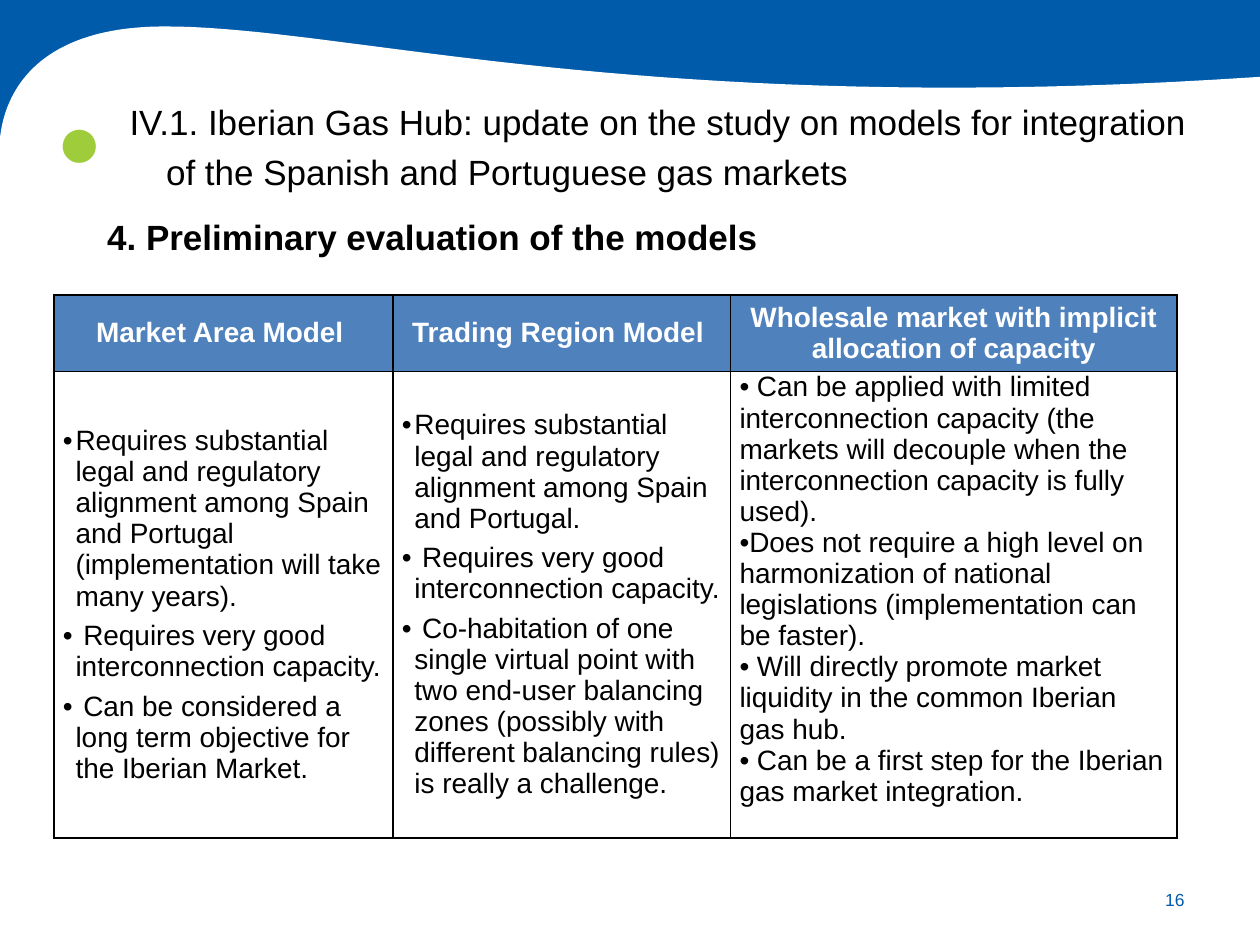
from lxml.etree import SubElement
from pptx import Presentation
from pptx.dml.color import RGBColor
from pptx.enum.shapes import MSO_SHAPE as Shape
from pptx.enum.text import MSO_ANCHOR as Anchor, MSO_AUTO_SIZE as AutoSize, PP_ALIGN as Align
from pptx.oxml.ns import qn
from pptx.util import Inches, Pt

BLUE = RGBColor(0x00, 0x5B, 0xAB)
GREEN = RGBColor(0x9E, 0xCC, 0x3B)
HEADER_BLUE = RGBColor(0x4F, 0x81, 0xBD)
BLACK = RGBColor(0, 0, 0)
WHITE = RGBColor(255, 255, 255)

# Each curve: start, two control points, end
WAVE = [
    [(10, 0.61), (5.1, 0.94), (2.76, 0.21), (1.31, 0.21)],
    [(1.31, 0.21), (0.23, 0.21), (0.03, 0.8), (0, 1.1)],
]
CURVE_STEPS = 40

MODELS = [
    ("Market Area Model ", [
        "Requires substantial legal and regulatory alignment among Spain and Portugal "
        "(implementation will take many years).",
        " Requires very good interconnection capacity.",
        " Can be considered a long term objective for the Iberian Market.",
    ]),
    ("Trading Region Model ", [
        "Requires substantial legal and regulatory alignment among Spain and Portugal.",
        " Requires very good interconnection capacity.",
        " Co-habitation of one single virtual point with two end-user balancing zones "
        "(possibly with different balancing rules) is really a challenge.",
    ]),
    ("Wholesale market with implicit allocation of capacity", [
        " Can be applied with limited interconnection capacity (the markets will "
        "decouple when the interconnection capacity is fully used).",
        "Does not require a high level on harmonization of national legislations "
        "(implementation can be faster).",
        " Will directly promote market liquidity in the common Iberian gas hub.",
        " Can be a first step for the Iberian gas market integration.",
    ]),
]
COLUMN_WIDTHS = [2.69, 2.68, 3.54]
ROW_HEIGHTS = [0.61, 3.7]


def add_run(paragraph, text, size, color, bold=False):
    run = paragraph.add_run()
    run.text = text
    font = run.font
    font.name, font.size, font.bold = "Arial", Pt(size), bold
    font.color.rgb = color


def indent(paragraph, margin, first_line):
    properties = paragraph._p.get_or_add_pPr()
    properties.set("marL", str(Inches(margin)))
    properties.set("indent", str(Inches(first_line)))


def bezier_point(curve, t):
    weights = ((1 - t) ** 3, 3 * t * (1 - t) ** 2, 3 * t * t * (1 - t), t ** 3)
    return tuple(Inches(sum(w * point[axis] for w, point in zip(weights, curve)))
                 for axis in (0, 1))


def paint(shape, color):
    shape.shadow.inherit = False
    shape.fill.solid()
    shape.fill.fore_color.rgb = color
    shape.line.fill.background()


def add_wave_banner(slide, left, top, width, height):
    """Blue band whose lower edge is cut by the white page wave."""
    band = slide.shapes.add_shape(Shape.RECTANGLE, left, top, width, height)
    paint(band, BLUE)
    edge = [bezier_point(curve, step / CURVE_STEPS)
            for curve in WAVE for step in range(CURVE_STEPS + 1)]
    bottom = Inches(7.5)
    page = slide.shapes.build_freeform(*edge[0])
    page.add_line_segments(edge[1:] + [(left, bottom), (left + width, bottom)], close=True)
    paint(page.convert_to_shape(), WHITE)


def add_label(slide, box, text, size, color, align=Align.LEFT, anchor=Anchor.TOP):
    frame = slide.shapes.add_textbox(*box).text_frame
    frame.word_wrap = True
    frame.vertical_anchor = anchor
    paragraph = frame.paragraphs[0]
    paragraph.alignment = align
    add_run(paragraph, text, size, color)
    return paragraph


def add_heading(slide, left, top, width, height):
    """Section heading with its green marker in front."""
    marker_box = (left, top - Inches(0.11), Inches(0.55), Inches(0.94))
    marker = add_label(slide, marker_box, "●", 44, GREEN, Align.CENTER, Anchor.BOTTOM)
    indent(marker, 0.39, -0.39)
    text_left = left + Inches(0.48)
    heading = add_label(
        slide, (text_left, top, left + width - text_left, height),
        "IV.1. Iberian Gas Hub: update on the study on models for integration "
        "of the Spanish and Portuguese gas markets", 20, BLACK)
    indent(heading, 0.39, -0.29)
    heading.line_spacing = 1.2


def fill_title(slide, left, top, width, height):
    title = slide.shapes.title
    slide.shapes._spTree.append(title._element)  # in front of the wave
    title.left, title.top, title.width, title.height = left, top, width, height
    frame = title.text_frame
    frame.auto_size = AutoSize.NONE
    frame.vertical_anchor = Anchor.TOP
    paragraph = frame.paragraphs[0]
    paragraph.alignment = Align.LEFT
    paragraph.line_spacing = 0.9
    add_run(paragraph, "4. Preliminary evaluation of the models", 20, BLACK, bold=True)


def format_cell(cell, fill, side_margin):
    properties = cell._tc.get_or_add_tcPr()
    for side in ("a:lnL", "a:lnR", "a:lnT", "a:lnB"):
        line = SubElement(properties, qn(side), w=str(Pt(1)))
        color = SubElement(SubElement(line, qn("a:solidFill")), qn("a:srgbClr"))
        color.set("val", str(BLACK))
    cell.fill.solid()
    cell.fill.fore_color.rgb = fill
    cell.vertical_anchor = Anchor.MIDDLE
    cell.margin_left = cell.margin_right = Inches(side_margin)
    cell.margin_top = cell.margin_bottom = 0


def fill_points(cell, points, hanging):
    frame = cell.text_frame
    for number, point in enumerate(points):
        paragraph = frame.add_paragraph() if number else frame.paragraphs[0]
        properties = paragraph._p.get_or_add_pPr()
        SubElement(properties, qn("a:buFont"), typeface="Arial")
        SubElement(properties, qn("a:buChar"), char="•")
        paragraph.font.size = Pt(16)
        if hanging:
            indent(paragraph, 0.1, -0.1)
            paragraph.space_after = Pt(2.4)
            if number:
                paragraph.space_before = Pt(2.4)
        add_run(paragraph, point, 16, BLACK)


def add_model_table(slide, left, top, width, height):
    table = slide.shapes.add_table(2, len(MODELS), left, top, width, height).table
    for row, row_height in zip(table.rows, ROW_HEIGHTS):
        row.height = Inches(row_height)
    for index, (model, points) in enumerate(MODELS):
        table.columns[index].width = Inches(COLUMN_WIDTHS[index])
        header, body = table.cell(0, index), table.cell(1, index)
        format_cell(header, HEADER_BLUE, 0.06)
        paragraph = header.text_frame.paragraphs[0]
        paragraph.alignment = Align.CENTER
        add_run(paragraph, model, 16, WHITE, bold=True)
        format_cell(body, WHITE, 0.07)
        is_wholesale = index == len(MODELS) - 1
        fill_points(body, points, hanging=not is_wholesale)
        if is_wholesale:
            body.vertical_anchor = Anchor.TOP


def main():
    deck = Presentation()
    deck.slide_width, deck.slide_height = Inches(10), Inches(7.5)
    slide = deck.slides.add_slide(deck.slide_layouts[5])
    add_wave_banner(slide, 0, 0, deck.slide_width, Inches(1.15))
    add_label(slide, (Inches(8.94), Inches(6.94), Inches(0.56), Inches(0.4)),
              "16", 10, BLUE, Align.RIGHT, Anchor.MIDDLE)
    fill_title(slide, Inches(0.75), Inches(1.7), Inches(8.49), Inches(0.62))
    add_model_table(slide, Inches(0.43), Inches(2.34),
                    Inches(sum(COLUMN_WIDTHS)), Inches(sum(ROW_HEIGHTS)))
    add_heading(slide, Inches(0.35), Inches(0.68), Inches(9.22), Inches(0.91))
    deck.save("out.pptx")


if __name__ == "__main__":
    main()
